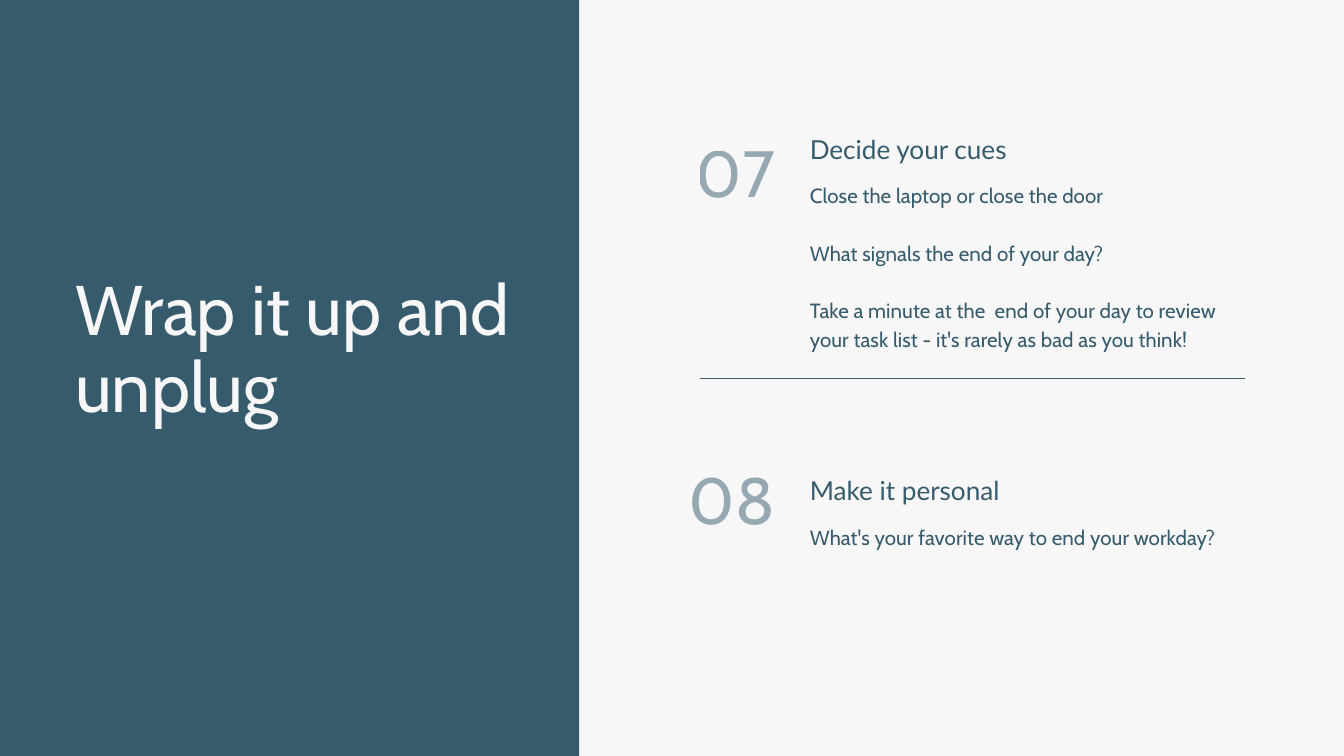
from dataclasses import dataclass

import pptx
import pptx.dml.color
import pptx.enum.shapes
import pptx.enum.text
import pptx.oxml.ns
import pptx.oxml.xmlchemy
import pptx.util
from pptx.util import Cm

HUES = {"teal": "365B6D", "pale": "F7F7F7"}
ALIGN = pptx.enum.text.PP_ALIGN


@dataclass(frozen=True)
class Style:
    """Look of one kind of text."""
    font: str
    size: float
    line: float
    hue: str = "teal"
    track: int = 0
    alpha: int = 100
    align: ALIGN = ALIGN.LEFT


@dataclass(frozen=True)
class Step:
    """A numbered step with its heading and body lines."""
    mark: str
    head: str
    body: tuple[str, ...]
    top: float
    mark_top: float
    tall: float


TITLE = Style("Cabin", 75.2, 82.7, "pale")
HEAD = Style("Lato", 28, 33.6)
BODY = Style("Cabin", 22, 30.8, track=10)
MARK = Style("Cabin", 70, 77, track=30, alpha=50, align=ALIGN.RIGHT)

STEPS = (
    Step("07", "Decide your cues", (
        "Close the laptop or close the door",
        "What signals the end of your day?",
        "Take a minute at the  end of your day to review "
        "your task list - it's rarely as bad as you think!",
    ), 5.03, 5.26, 6.32),
    Step("08", "Make it personal", (
        "What's your favorite way to end your workday?",
    ), 17.93, 17.6, 0.99),
)


def tint(name: str) -> pptx.dml.color.RGBColor:
    """Look up a colour by name."""
    return pptx.dml.color.RGBColor.from_string(HUES[name])


def write(slide, lines: tuple[str, ...], style: Style,
          left: float, top: float, wide: float, tall: float) -> None:
    """Add a text box with one paragraph per line, a blank line's height apart."""
    box = slide.shapes.add_textbox(Cm(left), Cm(top), Cm(wide), Cm(tall))
    frame = box.text_frame
    frame.word_wrap = True
    frame.auto_size = pptx.enum.text.MSO_AUTO_SIZE.SHAPE_TO_FIT_TEXT
    frame.margin_left = frame.margin_right = 0
    frame.margin_top = frame.margin_bottom = 0
    frame.text = "\n".join(lines)
    for index, para in enumerate(frame.paragraphs):
        para.alignment = style.align
        para.line_spacing = pptx.util.Pt(style.line)
        para.space_before = pptx.util.Pt(style.line if index else 0)
        for run in para.runs:
            font = run.font
            font.name = style.font
            font.size = pptx.util.Pt(style.size)
            font.color.rgb = tint(style.hue)
            props = run._r.get_or_add_rPr()
            if style.track:
                props.set("spc", str(style.track))
            if style.alpha < 100:
                shade = props.find(".//" + pptx.oxml.ns.qn("a:srgbClr"))
                alpha = pptx.oxml.xmlchemy.OxmlElement("a:alpha")
                alpha.set("val", str(style.alpha * 1000))
                shade.append(alpha)


def panel(slide, wide: float, tall: float) -> None:
    """Fill the left side of the slide."""
    shape = slide.shapes.add_shape(
        pptx.enum.shapes.MSO_SHAPE.RECTANGLE, 0, 0, Cm(wide), Cm(tall))
    shape.shadow.inherit = False
    shape.fill.solid()
    shape.fill.fore_color.rgb = tint("teal")
    shape.line.fill.background()


def rule(slide, left: float, top: float, wide: float) -> None:
    """Draw the thin line between the steps."""
    line = slide.shapes.add_connector(
        pptx.enum.shapes.MSO_CONNECTOR.STRAIGHT,
        Cm(left), Cm(top), Cm(left + wide), Cm(top))
    line.line.color.rgb = tint("teal")
    line.line.width = pptx.util.Pt(0.75)
    line._element.spPr.append(pptx.oxml.xmlchemy.OxmlElement("a:effectLst"))


def draw(slide, step: Step) -> None:
    """Draw one step."""
    write(slide, (step.head,), HEAD, 30.61, step.top, 16.46, 1.17)
    write(slide, step.body, BODY, 30.61, step.top + 1.75, 16.46, step.tall)
    write(slide, (step.mark,), MARK, 25.4, step.mark_top, 3.89, 2.79)


def main() -> None:
    """Build and save the slide."""
    deck = pptx.Presentation()
    deck.slide_width, deck.slide_height = Cm(50.8), Cm(28.58)
    slide = deck.slides.add_slide(deck.slide_layouts[6])
    slide.background.fill.solid()
    slide.background.fill.fore_color.rgb = tint("pale")
    rule(slide, 26.47, 14.29, 20.6)
    panel(slide, 21.89, 28.58)
    write(slide, ("Wrap it up and unplug",), TITLE, 2.84, 10.29, 16.74, 5.87)
    for step in STEPS:
        draw(slide, step)
    deck.save("out.pptx")


if __name__ == "__main__":
    main()
